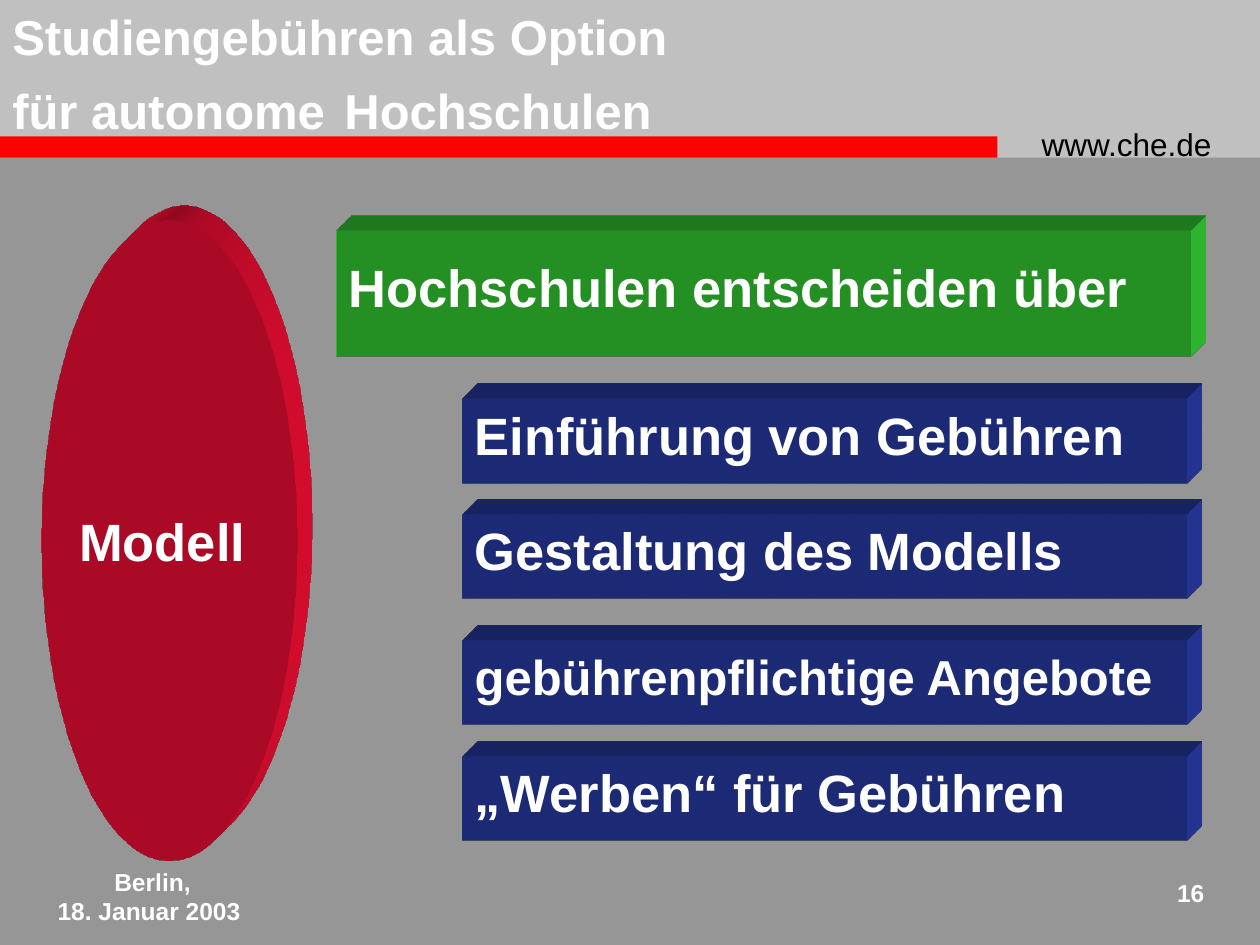
from lxml.etree import fromstring
from pptx import Presentation
from pptx.dml.color import RGBColor
from pptx.enum.shapes import MSO_SHAPE as Shape
from pptx.enum.text import MSO_ANCHOR as Anchor, PP_ALIGN as Align
from pptx.util import Cm, Pt

WHITE = RGBColor(255, 255, 255)
BLACK = RGBColor(0, 0, 0)
GREY = RGBColor(150, 150, 150)
SILVER = RGBColor(192, 192, 192)
RED = RGBColor(255, 0, 0)
CRIMSON = RGBColor(240, 14, 52)
GREEN = RGBColor(51, 204, 51)
BLUE = RGBColor(41, 59, 165)
NAMESPACE = "http://schemas.openxmlformats.org/drawingml/2006/main"


def write(para, text, size, color=WHITE, bold=True):
    span = para.add_run()
    span.text = text
    values = {"name": "Arial", "size": Pt(size), "bold": bold}
    for key, value in values.items():
        setattr(span.font, key, value)
    span.font.color.rgb = color


def add_block(kind, bounds, color):
    block = page.shapes.add_shape(kind, *map(Cm, bounds))
    block.shadow.inherit = False
    block.fill.solid()
    block.fill.fore_color.rgb = color
    block.line.fill.background()
    return block


deck = Presentation()
deck.slide_width, deck.slide_height = Cm(25.4), Cm(19.05)
page = deck.slides.add_slide(deck.slide_layouts[6])
page.background.fill.solid()
page.background.fill.fore_color.rgb = GREY

add_block(Shape.RECTANGLE, (0, 0, 25.4, 3.18), SILVER)
add_block(Shape.RECTANGLE, (-0.03, 2.75, 20.14, 0.43), RED)

labels = [
    (["www.che.de"], (20.75, 2.39, 4.45, 1.02), 18, BLACK, False, Align.LEFT),
    (["Berlin,", "18. Januar 2003 "], (0, 17.35, 6.15, 1.27), 14, WHITE, True, Align.CENTER),
    (["16"], (23.06, 17.58, 1.47, 1.07), 14, WHITE, True, Align.RIGHT),
]
for lines, bounds, size, color, bold, align in labels:
    box = page.shapes.add_textbox(*map(Cm, bounds))
    box.text_frame.word_wrap = True
    for number, line in enumerate(lines):
        para = box.text_frame.add_paragraph() if number else box.text_frame.paragraphs[0]
        para.alignment = align
        write(para, line, size, color, bold)

title = page.shapes.add_textbox(Cm(0), Cm(0), Cm(20.12), Cm(2.72))
title.text_frame.word_wrap = True
write(title.text_frame.paragraphs[0], "Studiengebühren als Option", 28)
para = title.text_frame.add_paragraph()
para.line_spacing = 0.25
para.space_before = Pt(27)
for text, size in [("für autonome", 28), (" ", 40), ("Hochschulen", 28)]:
    write(para, text, size)

blocks = [
    ("Modell ", Shape.OVAL, (0.84, 4.45, 5.16, 12.9), CRIMSON, 30, Align.CENTER, 1.0),
    ("Hochschulen entscheiden über", Shape.RECTANGLE, (6.78, 4.65, 17.22, 2.54), GREEN, 30, Align.LEFT, 0.75),
]
topics = [
    ("Einführung von Gebühren", 8.04, 30),
    ("Gestaltung des Modells", 10.37, 30),
    ("gebührenpflichtige Angebote", 12.91, 28),
    ("„Werben“ für Gebühren", 15.24, 30),
]
for text, top, size in topics:
    blocks.append((text, Shape.RECTANGLE, (9.32, top, 14.6, 1.7), BLUE, size, Align.LEFT, 0.75))

for text, kind, bounds, color, size, align, spacing in blocks:
    block = add_block(kind, bounds, color)
    scene = (
        f'<a:scene3d xmlns:a="{NAMESPACE}"><a:camera prst="legacyObliqueTopRight"/>'
        '<a:lightRig rig="legacyFlat3" dir="b"/></a:scene3d>'
    )
    depth = (
        f'<a:sp3d xmlns:a="{NAMESPACE}" extrusionH="{Cm(0.85)}" prstMaterial="legacyMatte">'
        f'<a:extrusionClr><a:srgbClr val="{color}"/></a:extrusionClr></a:sp3d>'
    )
    for part in (scene, depth):
        block.element.spPr.append(fromstring(part))
    frame = block.text_frame
    frame.word_wrap = False
    frame.vertical_anchor = Anchor.MIDDLE
    para = frame.paragraphs[0]
    para.alignment = align
    para.line_spacing = spacing
    write(para, text, size)

deck.save("out.pptx")
